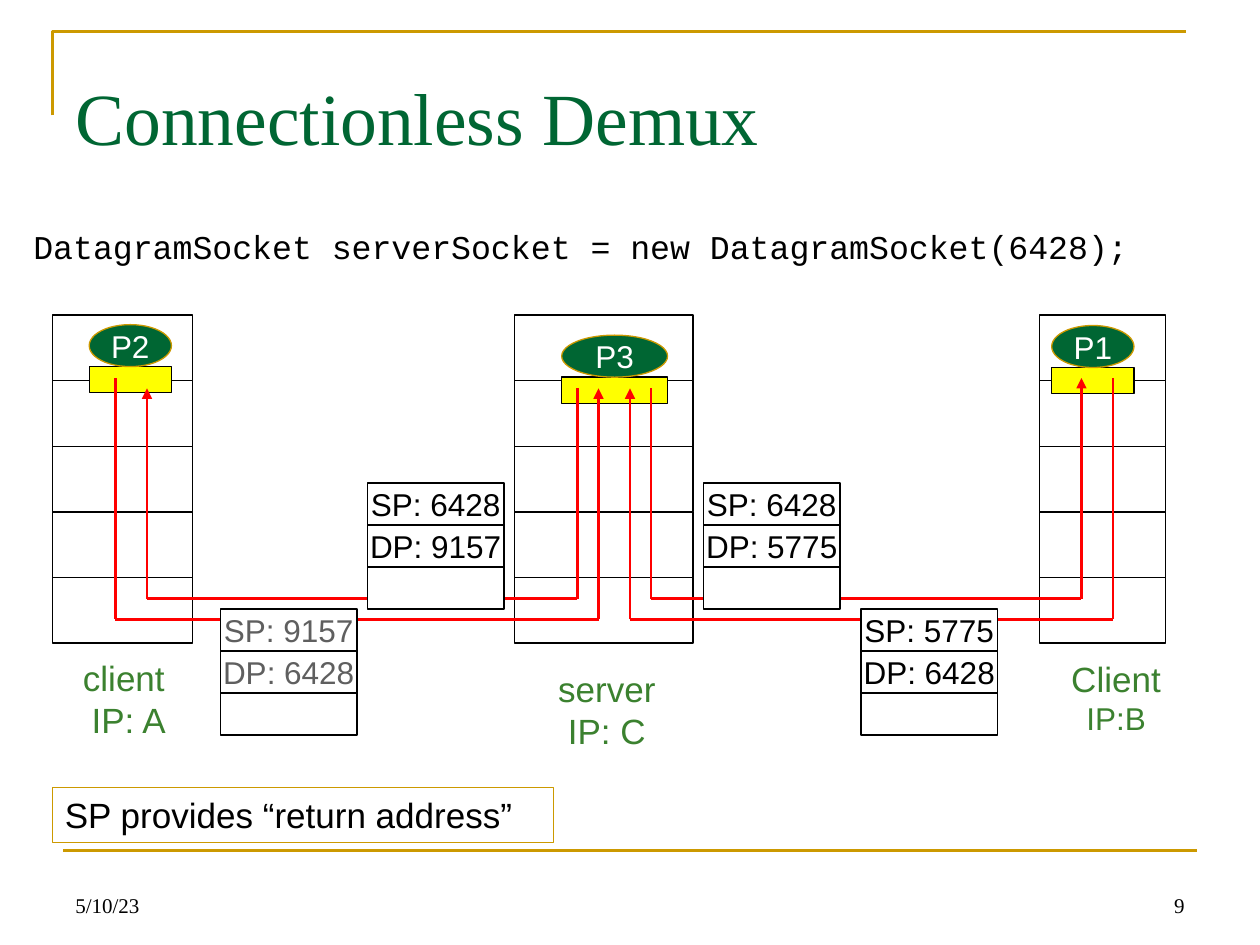
import pptx
import pptx.dml.color
import pptx.enum.shapes
import pptx.enum.text
import pptx.oxml.ns
import pptx.util
from lxml import etree

Pt = pptx.util.Pt
Shape = pptx.enum.shapes.MSO_SHAPE
Align = pptx.enum.text.PP_ALIGN
Anchor = pptx.enum.text.MSO_ANCHOR

GOLD, GREEN, LEAF = "CC9900", "006633", "3B812F"
BLACK, WHITE, GRAY = "000000", "FFFFFF", "5F5F5F"
YELLOW, RED = "FFFF00", "FF0000"
ROW, PART = 37.5, 24  # row heights of host stacks and packets


def color(code):
    return pptx.dml.color.RGBColor.from_string(code)


def apply(item, form):
    for name, value in form.items():
        setattr(item, name, value)


def write(shape, lines, sizes, ink=BLACK, face="Arial", wrap=False,
          anchor=Anchor.TOP, **form):
    """Fill a shape with one paragraph per line."""
    frame = shape.text_frame
    apply(frame, {"word_wrap": wrap, "vertical_anchor": anchor})
    for i, (line, size) in enumerate(zip(lines, sizes)):
        par = frame.add_paragraph() if i else frame.paragraphs[0]
        apply(par, {"alignment": Align.LEFT, **form})
        run = par.add_run()
        run.text = line
        apply(run.font, {"size": Pt(size), "name": face})
        run.font.color.rgb = color(ink)


def label(slide, box, lines, sizes, **form):
    shape = slide.shapes.add_textbox(*map(Pt, box))
    write(shape, lines, sizes, **form)


def style(shape, fill, line, width=0.75):
    shape.shadow.inherit = False
    if fill:
        shape.fill.solid()
        shape.fill.fore_color.rgb = color(fill)
    else:
        shape.fill.background()
    shape.line.color.rgb = color(line)
    shape.line.width = Pt(width)


def block(slide, box, fill=WHITE, line=BLACK, kind=Shape.RECTANGLE):
    shape = slide.shapes.add_shape(kind, *map(Pt, box))
    style(shape, fill, line)
    return shape


def wire(slide, start, end, ink=RED, arrow=False):
    link = slide.shapes.add_connector(
        pptx.enum.shapes.MSO_CONNECTOR.STRAIGHT, *map(Pt, start + end))
    link.line.color.rgb = color(ink)
    link.line.width = Pt(1.5)
    if arrow:
        tip = etree.SubElement(link.line._get_or_add_ln(),
                               pptx.oxml.ns.qn("a:tailEnd"))
        tip.set("type", "triangle")
    etree.SubElement(link._element.spPr, pptx.oxml.ns.qn("a:effectLst"))


def host(slide, left, width, name, oval):
    """Draw a five-layer stack with its process and socket."""
    for i in range(5):
        block(slide, (left, 180 + i * ROW, width, ROW))
    x, y, w = oval
    block(slide, (x, y + 24, w, 15), YELLOW)
    shape = block(slide, (x, y, w, 24), GREEN, GOLD, Shape.OVAL)
    write(shape, [name], [18], WHITE, anchor=Anchor.MIDDLE,
          alignment=Align.CENTER)


def packet(slide, left, top, source, dest, ink=BLACK):
    for i, text in enumerate((f"SP: {source}", f"DP: {dest}", "")):
        shape = block(slide, (left, top + i * PART, 78, PART))
        if text:
            write(shape, [text], [18], ink, anchor=Anchor.MIDDLE,
                  alignment=Align.CENTER)


def route(slide, points):
    """Join the points, with an arrowhead at the last one."""
    pairs = list(zip(points, points[1:]))
    for start, end in pairs:
        wire(slide, start, end, arrow=(start, end) == pairs[-1])


def main():
    deck = pptx.Presentation()
    apply(deck, {"slide_width": Pt(720), "slide_height": Pt(540)})
    slide = deck.slides.add_slide(deck.slide_layouts[6])

    # Frame lines
    path = slide.shapes.build_freeform(Pt(30), Pt(66))
    path.add_line_segments([(Pt(30), Pt(18)), (Pt(678), Pt(18))], close=False)
    style(path.convert_to_shape(), None, GOLD, 1.5)
    wire(slide, (36, 486), (684, 486), GOLD)

    # Title and code
    label(slide, (36, 21.6, 648, 90), ["Connectionless Demux"], [42],
          ink=GREEN, face="Times New Roman", wrap=True, anchor=Anchor.MIDDLE)
    label(slide, (12, 126, 684, 48),
          ["DatagramSocket serverSocket = new DatagramSocket(6428);"], [19],
          face="Courier New", wrap=True, space_before=Pt(4))

    # Hosts and their captions
    for spec_row in ((30, 80, "P2", (51, 185.5, 47)),
                     (594, 72, "P1", (601, 186, 47)),
                     (294, 102, "P3", (321, 191.5, 60.5))):
        host(slide, *spec_row)
    for box, lines, sizes in (
            ((36.5, 371.5, 68.5, 55.5), ["client", " IP: A"], (20, 20)),
            ((309, 378, 75.5, 55.5), ["server", "IP: C"], (20, 20)),
            ((603.5, 372, 68.5, 50.5), ["Client", "IP:B"], (20, 18))):
        label(slide, box, lines, sizes, ink=LEAF, alignment=Align.CENTER)

    # Datagram routes
    for points in (
            [(66, 216), (66, 354), (342, 354), (342, 222)],
            [(330, 222), (330, 342), (84, 342), (84, 222)],
            [(636, 216), (636, 354), (360, 354), (360, 222)],
            [(372, 222), (372, 342), (618, 342), (618, 216)]):
        route(slide, points)

    # Packets
    packet(slide, 210, 276, 6428, 9157)
    packet(slide, 126, 348, 9157, 6428, GRAY)
    packet(slide, 402, 276, 6428, 5775)
    packet(slide, 492, 348, 5775, 6428)

    # Remark and footer
    note = block(slide, (30, 450, 286.5, 31.5), None, GOLD)
    write(note, ["SP provides “return address”"], [20])
    for left, text, side in ((36, "5/10/23", Align.LEFT),
                             (516, "9", Align.RIGHT)):
        label(slide, (left, 492, 168, 36), [text], [12],
              face="Times New Roman", wrap=True, anchor=Anchor.BOTTOM,
              alignment=side)

    deck.save("out.pptx")


if __name__ == "__main__":
    main()
